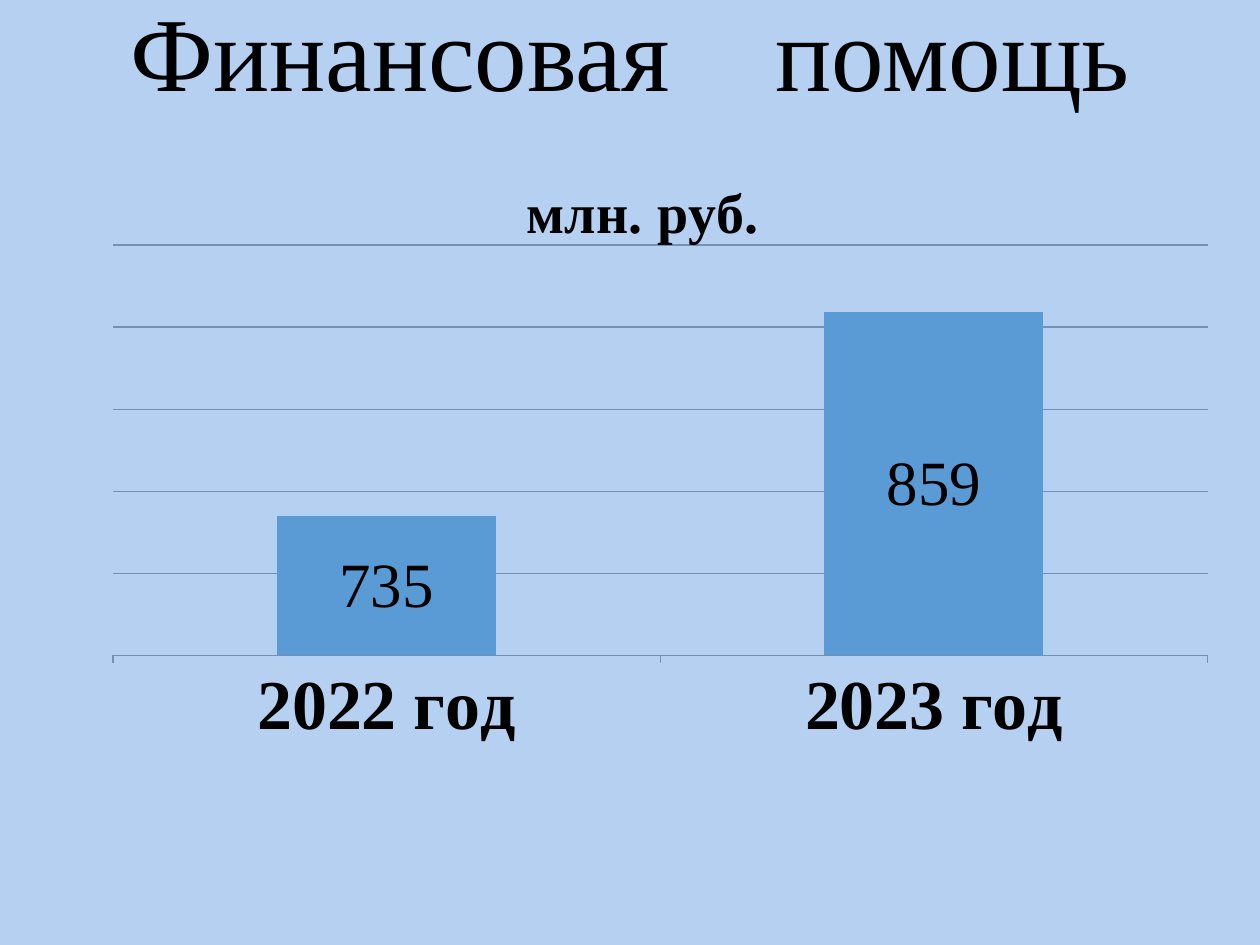
from dataclasses import dataclass

from lxml import etree
from pptx import Presentation
from pptx.chart.data import CategoryChartData
from pptx.dml.color import RGBColor
from pptx.enum.chart import XL_CHART_TYPE, XL_LABEL_POSITION, XL_TICK_MARK
from pptx.enum.text import MSO_ANCHOR, PP_ALIGN
from pptx.oxml.ns import qn
from pptx.util import Inches, Pt

STACKED = XL_CHART_TYPE.COLUMN_STACKED
LABEL_CENTER = XL_LABEL_POSITION.CENTER
TICK_OUT = XL_TICK_MARK.OUTSIDE
MIDDLE = MSO_ANCHOR.MIDDLE
CENTER = PP_ALIGN.CENTER
BLANK_LAYOUT = 6


@dataclass(frozen=True)
class Theme:
    background: RGBColor = RGBColor(0xB5, 0xD0, 0xF1)
    ink: RGBColor = RGBColor(0, 0, 0)
    column: RGBColor = RGBColor(0x5B, 0x9B, 0xD5)
    grid: RGBColor = RGBColor(0x74, 0x90, 0xB5)
    heading_face: str = "Times New Roman"
    body_face: str = "Calibri"
    heading_size: int = 60
    category_size: int = 40
    value_size: int = 36
    unit_size: int = 32
    body_size: int = 18


THEME = Theme()
WIDTH, HEIGHT = Inches(10), Inches(7.5)

# Boxes as shares of the slide: left, top, width, height
HEADING_BOX = (0.069, -0.036, 0.862, 0.193)
CHART_BOX = (0.059, 0.143, 0.9, 0.669)


def place(box):
    left, top, width, height = box
    return (round(left * WIDTH), round(top * HEIGHT),
            round(width * WIDTH), round(height * HEIGHT))


def style_font(font, size, bold=False, face=THEME.heading_face):
    font.name = face
    font.size = Pt(size)
    font.bold = bold
    font.color.rgb = THEME.ink


def set_layout(parent, index, **settings):
    """Fix the position of a chart part, in shares of the chart."""
    for old in parent.findall(qn("c:layout")):
        parent.remove(old)
    layout = etree.Element(qn("c:layout"))
    manual = etree.SubElement(layout, qn("c:manualLayout"))
    for key, value in settings.items():
        etree.SubElement(manual, qn(f"c:{key}")).set("val", str(value))
    parent.insert(index, layout)


def add_heading(slide, words, gap):
    frame = slide.shapes.add_textbox(*place(HEADING_BOX)).text_frame
    frame.word_wrap = True
    frame.vertical_anchor = MIDDLE
    paragraph = frame.paragraphs[0]
    paragraph.alignment = CENTER
    paragraph.line_spacing = 0.9
    first, second = words
    for text in (first, " ", second):
        run = paragraph.add_run()
        run.text = text
        style_font(run.font, THEME.heading_size)
        if text == " ":
            # Widen the space between the words, in hundredths of a point
            run.font._element.set("spc", str(gap * 100))


def add_column_chart(slide, unit, values):
    data = CategoryChartData()
    data.categories = list(values)
    data.add_series(unit, list(values.values()))
    chart = slide.shapes.add_chart(STACKED, *place(CHART_BOX), data).chart
    chart.has_legend = False
    style_font(chart.font, THEME.body_size, face=THEME.body_face)

    # Unit above the columns
    chart.has_title = True
    run = chart.chart_title.text_frame.paragraphs[0].add_run()
    run.text = unit
    style_font(run.font, THEME.unit_size, bold=True)
    chart.chart_title.include_in_layout = False
    set_layout(chart.chart_title._element, 1,
               xMode="edge", yMode="edge", x=0.39, y=0.05)

    # Columns and their values
    plot = chart.plots[0]
    plot.gap_width, plot.overlap = 150, 100
    plot.vary_by_categories = False
    fill = plot.series[0].format.fill
    fill.solid()
    fill.fore_color.rgb = THEME.column
    plot.has_data_labels = True
    labels = plot.data_labels
    labels.show_value = True
    labels.position = LABEL_CENTER
    style_font(labels.font, THEME.value_size)

    # Axes and grid
    years, amounts = chart.category_axis, chart.value_axis
    years.major_tick_mark = TICK_OUT
    years.format.line.color.rgb = THEME.grid
    style_font(years.tick_labels.font, THEME.category_size, bold=True)
    amounts.minimum_scale, amounts.maximum_scale = 650, 900
    amounts.major_unit = 50
    amounts.has_major_gridlines = True
    grid_line = amounts.major_gridlines.format.line
    grid_line.color.rgb = THEME.grid
    grid_line.width = Pt(0.75)
    amounts.visible = False

    plot_area = chart._chartSpace.find(".//" + qn("c:plotArea"))
    set_layout(plot_area, 0, layoutTarget="inner", xMode="edge", yMode="edge",
               x=0.034, y=0.174, w=0.966, h=0.649)


def main():
    presentation = Presentation()
    presentation.slide_width, presentation.slide_height = WIDTH, HEIGHT
    slide = presentation.slides.add_slide(
        presentation.slide_layouts[BLANK_LAYOUT])
    background = slide.background.fill
    background.solid()
    background.fore_color.rgb = THEME.background

    add_heading(slide, ("Финансовая", "помощь"), gap=45)
    add_column_chart(slide, "млн. руб.", {"2022 год": 735, "2023 год": 859})
    presentation.save("out.pptx")


if __name__ == "__main__":
    main()
